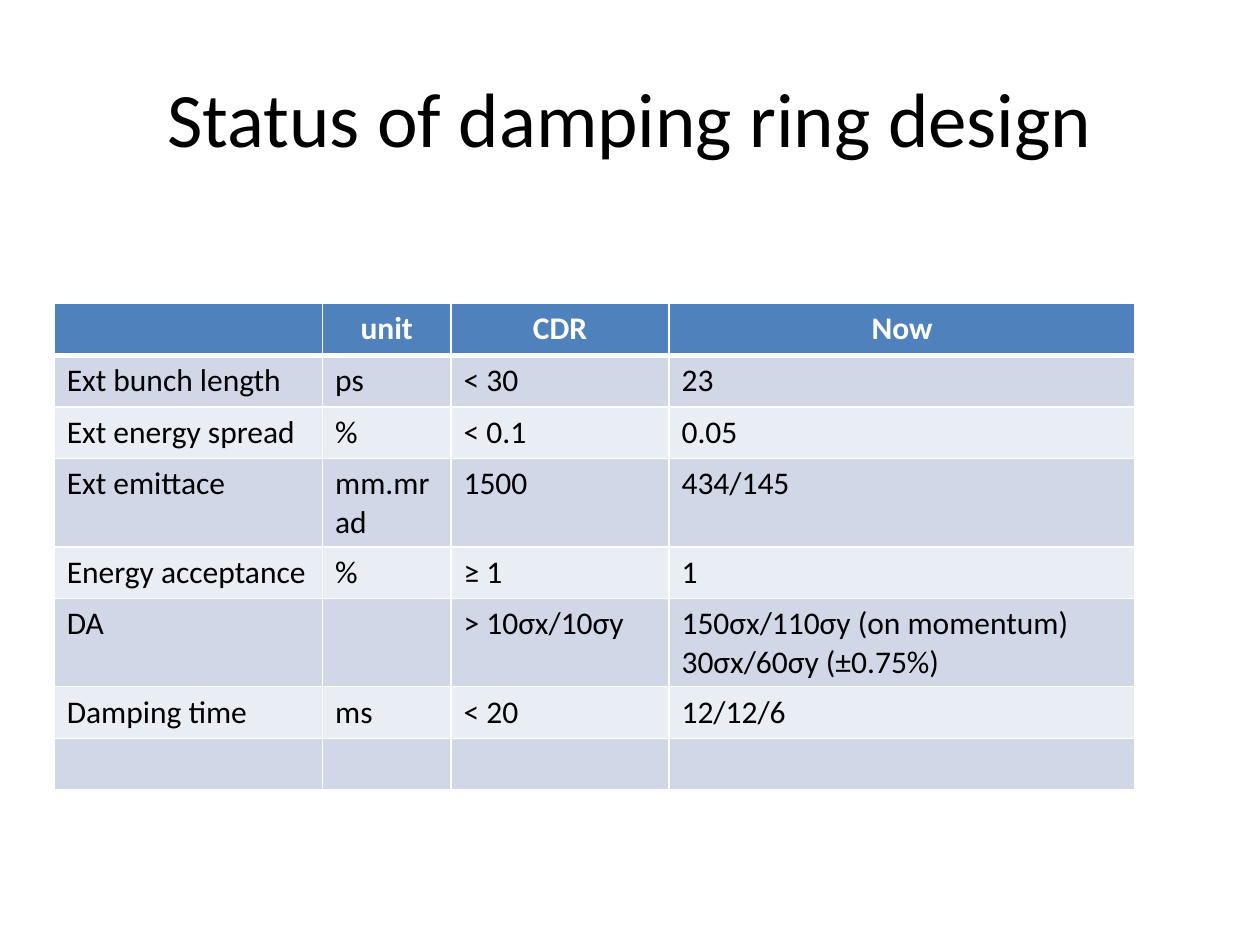
import pptx
import pptx.dml.color
import pptx.enum.text
import pptx.oxml
import pptx.oxml.ns
import pptx.util
from pptx.util import Inches

FONT = "Calibri"
WHITE, BLACK = "FFFFFF", "000000"
HEADER_FILL = "4F81BD"
BAND_FILLS = ("E9EDF4", "D0D8E8")
COLUMN_WIDTHS = (2.13, 1.02, 1.73, 3.7)
ROW_HEIGHT = 0.41
PARAMETERS = (
    ("", "unit", "CDR", "Now"),
    ("Ext bunch length", "ps", "< 30", "23"),
    ("Ext energy spread", "%", "< 0.1", "0.05"),
    ("Ext emittace", "mm.mrad", "1500", "434/145"),
    ("Energy acceptance", "%", "≥ 1", "1"),
    ("DA", "", "> 10σx/10σy", "150σx/110σy (on momentum)\n30σx/60σy (±0.75%)"),
    ("Damping time", "ms", "< 20", "12/12/6"),
    ("", "", "", ""),
)


def color(value):
    return pptx.dml.color.RGBColor.from_string(value)


def write_text(text_frame, text, size, text_color, bold=False, centered=False):
    text_frame.text = text
    align = pptx.enum.text.PP_ALIGN
    for paragraph in text_frame.paragraphs:
        paragraph.alignment = align.CENTER if centered else align.LEFT
        paragraph.font.name = FONT
        paragraph.font.size = pptx.util.Pt(size)
        paragraph.font.bold = bold
        paragraph.font.color.rgb = color(text_color)


def set_borders(cell, top, bottom):
    properties = cell._tc.get_or_add_tcPr()
    namespace = pptx.oxml.ns.nsdecls("a")
    sides = (("L", 1), ("R", 1), ("T", top), ("B", bottom))
    for position, (side, points) in enumerate(sides):
        border = pptx.oxml.parse_xml(
            f'<a:ln{side} {namespace} w="{pptx.util.Pt(points)}">'
            f'<a:solidFill><a:srgbClr val="{WHITE}"/></a:solidFill></a:ln{side}>'
        )
        properties.insert(position, border)


def add_title(slide, text):
    title = slide.shapes.add_textbox(Inches(0.5), Inches(0.3), Inches(9), Inches(1.25))
    title.text_frame.word_wrap = True
    title.text_frame.vertical_anchor = pptx.enum.text.MSO_ANCHOR.MIDDLE
    write_text(title.text_frame, text, 44, BLACK, centered=True)


def fill_cell(cell, text, row_index):
    header = row_index == 0
    cell.fill.solid()
    cell.fill.fore_color.rgb = color(HEADER_FILL if header else BAND_FILLS[row_index % 2])
    write_text(cell.text_frame, text, 18, WHITE if header else BLACK, header, header)
    set_borders(cell, top=3 if row_index == 1 else 1, bottom=3 if header else 1)


def add_parameter_table(slide):
    table = slide.shapes.add_table(
        len(PARAMETERS), len(COLUMN_WIDTHS), Inches(0.43), Inches(2.41),
        Inches(sum(COLUMN_WIDTHS)), Inches(ROW_HEIGHT * len(PARAMETERS)),
    ).table
    for column, width in zip(table.columns, COLUMN_WIDTHS):
        column.width = Inches(width)
    for row_index, values in enumerate(PARAMETERS):
        table.rows[row_index].height = Inches(ROW_HEIGHT)
        for column_index, text in enumerate(values):
            fill_cell(table.cell(row_index, column_index), text, row_index)


def main():
    presentation = pptx.Presentation()
    presentation.slide_width = Inches(10)
    presentation.slide_height = Inches(7.5)
    slide = presentation.slides.add_slide(presentation.slide_layouts[6])
    add_title(slide, "Status of damping ring design")
    add_parameter_table(slide)
    presentation.save("out.pptx")


if __name__ == "__main__":
    main()
